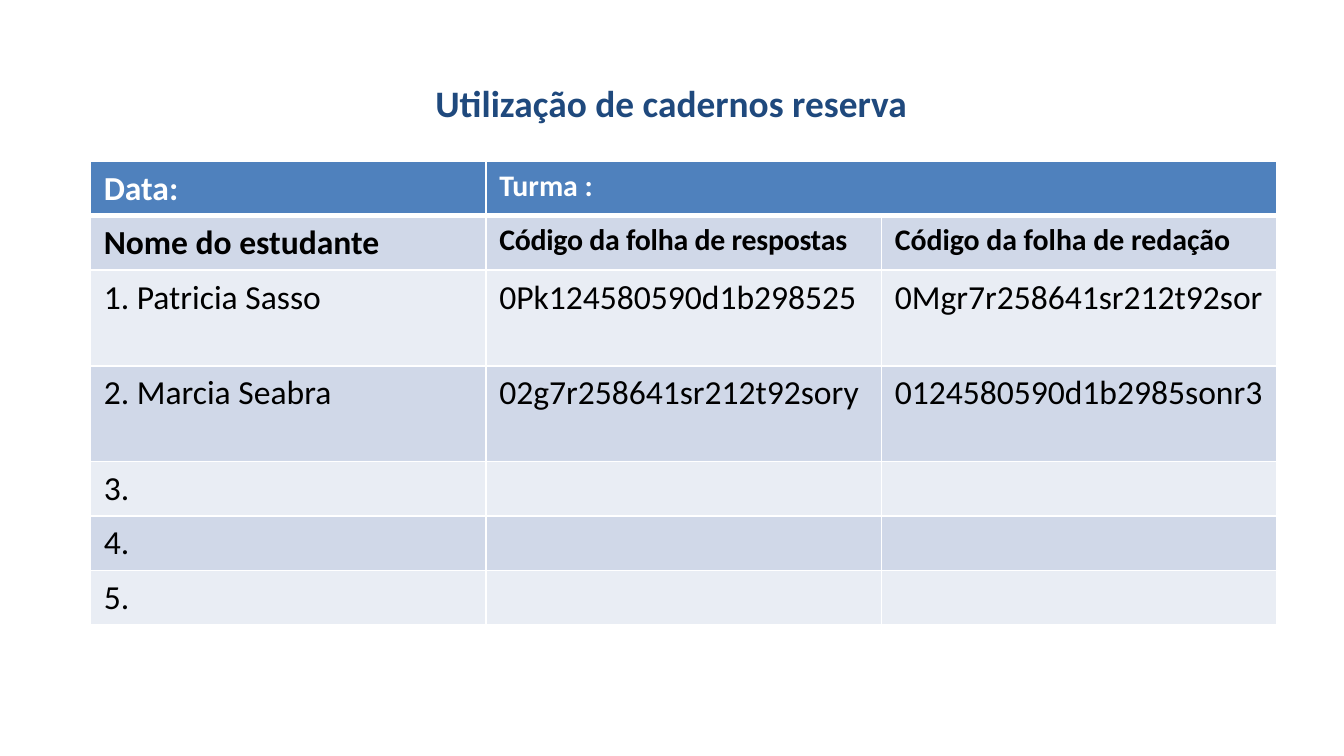
from lxml.etree import SubElement
from pptx import Presentation
from pptx.dml.color import RGBColor
from pptx.enum.text import MSO_ANCHOR, PP_ALIGN
from pptx.oxml.ns import qn
from pptx.util import Pt

FONT = "Calibri"
NAVY = RGBColor(0x1F, 0x49, 0x7D)
BLUE = RGBColor(0x4F, 0x81, 0xBD)
BAND_DARK = RGBColor(0xD0, 0xD8, 0xE8)
BAND_LIGHT = RGBColor(0xE9, 0xED, 0xF4)
WHITE = RGBColor(0xFF, 0xFF, 0xFF)
BLACK = RGBColor(0, 0, 0)

ROWS = [
    ["Data:", "Turma :", ""],
    ["Nome do estudante", "Código da folha de respostas", "Código da folha de redação"],
    ["1. Patricia Sasso", "0Pk124580590d1b298525", "0Mgr7r258641sr212t92sor"],
    ["2. Marcia Seabra", "02g7r258641sr212t92sory", "0124580590d1b2985sonr3"],
    ["3.", "", ""],
    ["4.", "", ""],
    ["5.", "", ""],
]
HEADING_ROWS = 2
ROW_HEIGHT, TALL_ROW_HEIGHT = 29.2, 51.2


def add_run(paragraph, text, size, color, bold):
    run = paragraph.add_run()
    run.text = text
    run.font.name = FONT
    run.font.size = Pt(size)
    run.font.bold = bold
    run.font.color.rgb = color
    return run


def set_borders(cell, bottom_width):
    """Draw white lines around the cell, placed before its fill."""
    properties = cell._tc.get_or_add_tcPr()
    widths = {"a:lnL": 1, "a:lnR": 1, "a:lnT": 1, "a:lnB": bottom_width}
    for index, (tag, width) in enumerate(widths.items()):
        line = SubElement(properties, qn(tag), w=str(Pt(width)))
        fill = SubElement(line, qn("a:solidFill"))
        SubElement(fill, qn("a:srgbClr"), val=str(WHITE))
        properties.insert(index, line)


def add_title(slide, left, top, width, height):
    title = slide.shapes.title
    title.left, title.top, title.width, title.height = map(Pt, (left, top, width, height))
    frame = title.text_frame
    frame.margin_left = frame.margin_top = frame.margin_right = frame.margin_bottom = 0
    frame.vertical_anchor = MSO_ANCHOR.TOP
    paragraph = frame.paragraphs[0]
    paragraph.alignment = PP_ALIGN.CENTER
    add_run(paragraph, "Utilização de cadernos reserva", 20, NAVY, True)


def fill_cell(cell, text, row, column):
    is_header = row == 0
    is_heading = row < HEADING_ROWS
    band = BAND_DARK if row % 2 else BAND_LIGHT
    cell.fill.solid()
    cell.fill.fore_color.rgb = BLUE if is_header else band
    set_borders(cell, 3 if is_header else 1)
    if text:
        size = 16 if is_heading and column else 18
        color = WHITE if is_header else BLACK
        run = add_run(cell.text_frame.paragraphs[0], text, size, color, is_heading)
        if (row, column) == (1, 1):
            run.font._element.set("spc", "-10")


def add_register(slide, left, top, width):
    """Add the table of students and the codes of their sheets."""
    heights = [TALL_ROW_HEIGHT if cells[0][:2] in ("1.", "2.") else ROW_HEIGHT for cells in ROWS]
    column_count = len(ROWS[0])
    table = slide.shapes.add_table(
        len(ROWS), column_count, Pt(left), Pt(top), Pt(width), Pt(sum(heights))
    ).table
    for column in table.columns:
        column.width = Pt(width / column_count)
    for table_row, height in zip(table.rows, heights):
        table_row.height = Pt(height)
    for row, cells in enumerate(ROWS):
        for column, text in enumerate(cells):
            fill_cell(table.cell(row, column), text, row, column)
    table.cell(0, 1).merge(table.cell(0, 2))


def main():
    presentation = Presentation()
    presentation.slide_width, presentation.slide_height = Pt(720), Pt(405)
    slide = presentation.slides.add_slide(presentation.slide_layouts[5])
    add_title(slide, 15.1, 43.2, 689, 24.5)
    add_register(slide, 48.4, 86.4, 635.7)
    presentation.save("out.pptx")


if __name__ == "__main__":
    main()
